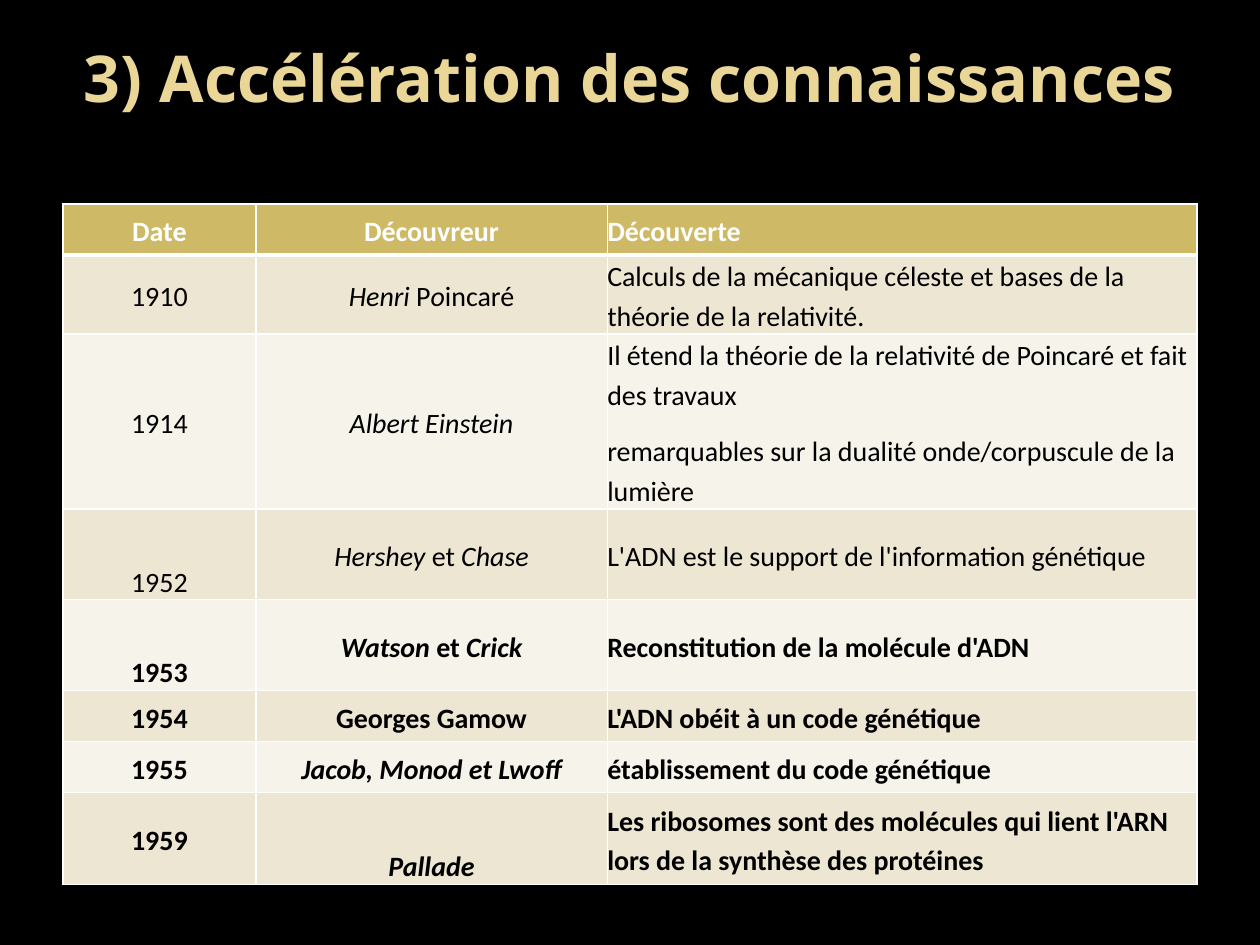
from dataclasses import dataclass

from lxml import etree
from pptx import Presentation
from pptx import util as u
from pptx.dml.color import RGBColor
from pptx.enum import text
from pptx.oxml import ns


@dataclass(frozen=True)
class Theme:
    background: str = "000000"
    title: str = "EAD696"
    header: str = "CEB966"
    bands: tuple = ("EDE6D3", "F6F3EA")
    light: str = "FFFFFF"
    dark: str = "000000"
    title_font: str = "Noto Sans"
    body_font: str = "Calibri"
    title_size: float = 36.9
    body_size: float = 16


THEME = Theme()
CENTER, LEFT = text.PP_ALIGN.CENTER, text.PP_ALIGN.LEFT
TOP, MIDDLE, BOTTOM = (text.MSO_ANCHOR.TOP, text.MSO_ANCHOR.MIDDLE,
                       text.MSO_ANCHOR.BOTTOM)

TITLE = "3) Accélération des connaissances"
HEADINGS = ("Date", "Découvreur", "Découverte")
# Asterisks enclose italics; a line break starts a new paragraph.
DISCOVERIES = (
    ("1910", "*Henri* P*o*incaré",
     "Calculs de la mécanique céleste et bases de la théorie de la relativité."),
    ("1914", "*Albert Einstein*",
     "Il étend la théorie de la relativité de Poincaré et fait des travaux\n"
     "remarquables sur la dualité onde/corpuscule de la lumière"),
    ("1952", "*Hershey* et *Chase*",
     "L'ADN est le support de l'information génétique"),
    ("1953", "*Watson* et *Crick*", "Reconstitution de la molécule d'ADN"),
    ("1954", "Georges Gamow", "L'ADN obéit à un code génétique"),
    ("1955", "*Jacob, Monod et Lwoff*", "établissement du code génétique"),
    ("1959", "*Pallade*",
     "Les ribosomes sont des molécules qui lient l'ARN lors de la synthèse "
     "des protéines"),
)
FIRST_BOLD_YEAR = 1953
LOW_TEXTS = ("1952", "1953", "*Pallade*")
COLUMN_SHARES = (0.17, 0.31, 0.52)
ROW_HEIGHTS = (1.03, 1.59, 3.53, 1.83, 1.83, 1.03, 1.03, 1.85)


def write(frame, content, *, font, size, color, bold=False, align=LEFT,
          line_spacing=None, space_after=None):
    """Fill a text frame, setting the parts between asterisks in italics."""
    for index, line in enumerate(content.split("\n")):
        para = frame.add_paragraph() if index else frame.paragraphs[0]
        para.alignment = align
        para.line_spacing = line_spacing
        para.space_after = space_after
        for part, piece in enumerate(line.split("*")):
            if not piece:
                continue
            span = para.add_run()
            span.text = piece
            span.font.name = font
            span.font.size = u.Pt(size)
            span.font.bold = bold
            span.font.italic = part % 2 == 1
            span.font.color.rgb = RGBColor.from_string(color)


def set_borders(cell, color, **widths):
    """Draw the cell's sides L, R, T and B with widths in points."""
    properties = cell._tc.get_or_add_tcPr()
    for side, width in widths.items():
        line = etree.SubElement(properties, ns.qn(f"a:ln{side}"),
                                w=str(u.Pt(width)))
        fill = etree.SubElement(line, ns.qn("a:solidFill"))
        etree.SubElement(fill, ns.qn("a:srgbClr"), val=color)


def place_title(page, left, top, width, height):
    box = page.shapes.title
    box.left, box.top, box.width, box.height = map(
        u.Cm, (left, top, width, height))
    frame = box.text_frame
    frame.word_wrap = True
    frame.auto_size = text.MSO_AUTO_SIZE.NONE
    frame.vertical_anchor = TOP
    frame.margin_left = frame.margin_right = 0
    frame.margin_top = frame.margin_bottom = 0
    write(frame, TITLE, font=THEME.title_font, size=THEME.title_size,
          color=THEME.title, bold=True, align=CENTER)


def fill_cell(cell, content, *, fill, color, bold, align, header):
    cell.margin_left = cell.margin_right = 0
    cell.margin_top = cell.margin_bottom = 0
    cell.vertical_anchor = BOTTOM if content in LOW_TEXTS else MIDDLE
    set_borders(cell, THEME.light, L=1, R=1, T=1, B=3 if header else 1)
    cell.fill.solid()
    cell.fill.fore_color.rgb = RGBColor.from_string(fill)
    write(cell.text_frame, content, font=THEME.body_font, size=THEME.body_size,
          color=color, bold=bold, align=align, line_spacing=1.15,
          space_after=u.Pt(10))


def place_discoveries(page, left, top, width):
    rows = (HEADINGS, *DISCOVERIES)
    table = page.shapes.add_table(
        len(rows), len(HEADINGS), u.Cm(left), u.Cm(top), u.Cm(width),
        u.Cm(sum(ROW_HEIGHTS))).table
    for column, share in zip(table.columns, COLUMN_SHARES):
        column.width = u.Cm(width * share)
    column_aligns = (CENTER, CENTER, LEFT)
    for index, values in enumerate(rows):
        table.rows[index].height = u.Cm(ROW_HEIGHTS[index])
        header = index == 0
        fill = THEME.header if header else THEME.bands[(index - 1) % 2]
        bold = header or int(values[0]) >= FIRST_BOLD_YEAR
        for column, content in enumerate(values):
            fill_cell(table.cell(index, column), content, fill=fill,
                      color=THEME.light if header else THEME.dark,
                      bold=bold, align=column_aligns[column], header=header)


def main():
    deck = Presentation()
    deck.slide_width, deck.slide_height = u.Cm(25.4), u.Cm(19.05)
    page = deck.slides.add_slide(deck.slide_layouts.get_by_name("Title Only"))
    page.background.fill.solid()
    page.background.fill.fore_color.rgb = RGBColor.from_string(THEME.background)
    place_title(page, 1.27, 0.76, 22.86, 3.18)
    place_discoveries(page, 1.27, 4.11, 22.86)
    deck.save("out.pptx")


if __name__ == "__main__":
    main()
